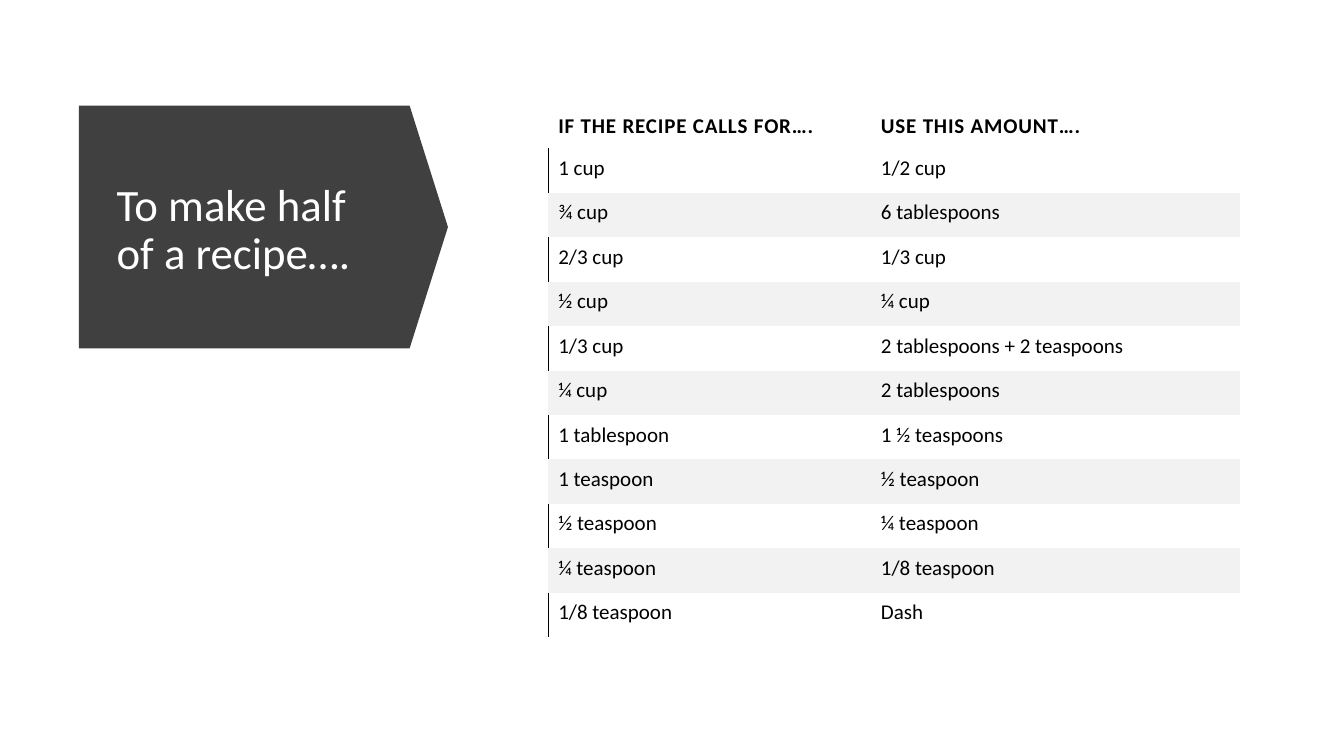
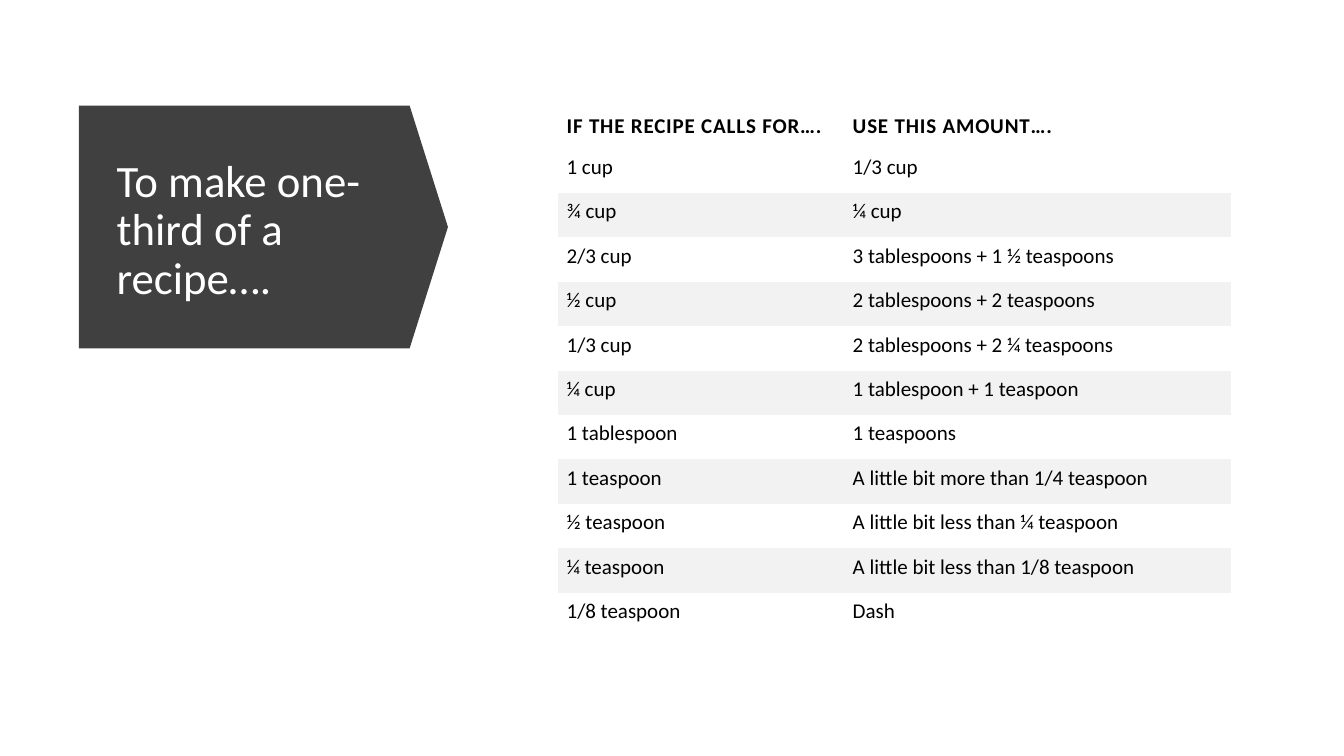
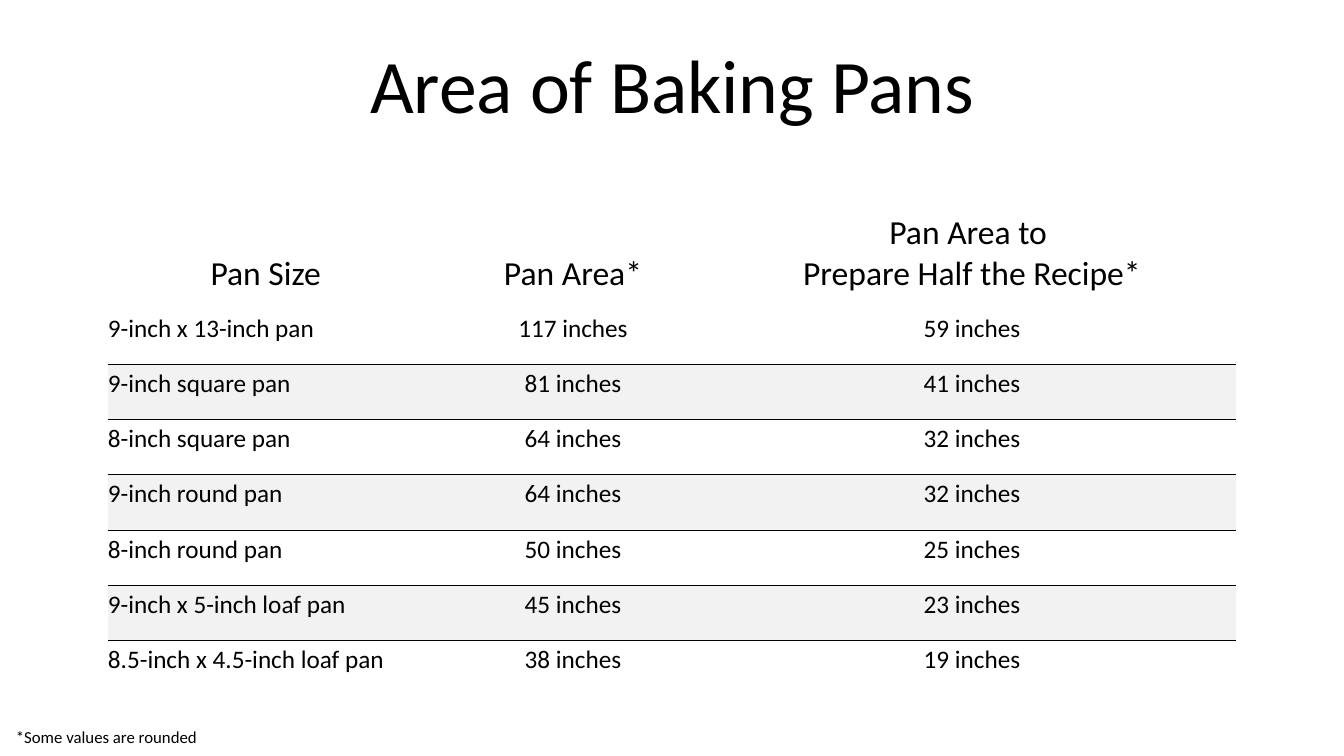
from dataclasses import dataclass

from lxml import etree
from pptx import Presentation
from pptx.dml.color import RGBColor
from pptx.enum import shapes, text
from pptx.oxml import ns
from pptx.util import Cm, Pt


@dataclass(frozen=True)
class Theme:
    font: str = "Calibri"
    ink: str = "000000"
    paper: str = "FFFFFF"
    arrow: str = "404040"
    band: str = "F2F2F2"
    page_title: int = 54
    arrow_title: int = 32
    pan_head: int = 24
    pan_body: int = 18
    recipe: int = 15
    note: int = 12
    plain_table: str = "{2D5ABB26-0587-4C30-8999-92F81FD0307C}"


THEME = Theme()
LEFT, CENTER = text.PP_ALIGN.LEFT, text.PP_ALIGN.CENTER
TOP, MIDDLE, BOTTOM = (text.MSO_ANCHOR.TOP, text.MSO_ANCHOR.MIDDLE,
                       text.MSO_ANCHOR.BOTTOM)

RECIPE_HEAD = ("IF THE RECIPE CALLS FOR….", "USE THIS AMOUNT….")
AMOUNTS = ("1 cup", "¾ cup", "2/3 cup", "½ cup", "1/3 cup", "¼ cup",
           "1 tablespoon", "1 teaspoon", "½ teaspoon", "¼ teaspoon",
           "1/8 teaspoon")
HALVES = ("1/2 cup", "6 tablespoons", "1/3 cup", "¼ cup",
          "2 tablespoons + 2 teaspoons", "2 tablespoons", "1 ½ teaspoons",
          "½ teaspoon", "¼ teaspoon", "1/8 teaspoon", "Dash")
THIRDS = ("1/3 cup", "¼ cup", "3 tablespoons + 1 ½ teaspoons",
          "2 tablespoons + 2 teaspoons", "2 tablespoons + 2 ¼ teaspoons",
          "1 tablespoon + 1 teaspoon", "1 teaspoons",
          "A little bit more than 1/4 teaspoon",
          "A little bit less than ¼ teaspoon",
          "A little bit less than 1/8 teaspoon", "Dash")
PAN_HEAD = ("Pan Size", "Pan Area*", "Pan Area to \nPrepare Half the Recipe*")
PANS = (
    ("9-inch x 13-inch pan", 117, 59),
    ("9-inch square pan", 81, 41),
    ("8-inch square pan", 64, 32),
    ("9-inch round pan", 64, 32),
    ("8-inch round pan", 50, 25),
    ("9-inch x 5-inch loaf pan", 45, 23),
    ("8.5-inch x 4.5-inch loaf pan", 38, 19),
)

# Lengths in cm; insets run left, top, right, bottom.
RECIPE_STYLE = dict(
    top=2.64, row_height=1.12, head_size=THEME.recipe, body_size=THEME.recipe,
    head_font=dict(bold=True), spacing=60, aligns=(LEFT, LEFT), head_align=LEFT)
RECIPES = (
    dict(title="To make half of a recipe….", results=HALVES,
         table=dict(left=13.82, widths=(8.13, 9.3), head_height=1.04,
                    head_insets=(0.25, 0.23, 0.25, 0.23),
                    insets=(0.25, 0.18, 0.25, 0.23), rule=("lnL", 1))),
    dict(title="To make one-third of a recipe….", results=THIRDS,
         table=dict(left=14.07, widths=(7.21, 9.73), head_height=1.07,
                    head_insets=(0.21, 0.23, 0.21, 0.23),
                    insets=(0.21, 0.15, 0.21, 0.23))),
)
PAN_STYLE = dict(
    left=2.72, top=5.18, widths=(8.33, 7.16, 12.95),
    head_height=2.62, row_height=1.39,
    head_size=THEME.pan_head, body_size=THEME.pan_body,
    aligns=(LEFT, CENTER, CENTER), head_align=CENTER,
    head_insets=(0, 0.08, 0.38, 0.38), insets=(0, 0.1, 0.38, 0.38),
    rule=("lnT", 0.75))


def style_text(tf, size, color=THEME.ink, align=LEFT, line_spacing=None,
               spacing=None, **font):
    values = dict(name=THEME.font, size=Pt(size), **font)
    for p in tf.paragraphs:
        p.alignment = align
        p.line_spacing = line_spacing
        for r in p.runs:
            for key, value in values.items():
                setattr(r.font, key, value)
            r.font.color.rgb = RGBColor.from_string(color)
            if spacing:
                r.font._element.set("spc", str(spacing))


def add_text(s, words, box, size, anchor=TOP, **style):
    tf = s.shapes.add_textbox(*map(Cm, box)).text_frame
    tf.word_wrap = True
    tf.vertical_anchor = anchor
    tf.text = words
    style_text(tf, size, **style)


def add_arrow_title(s, words):
    """Draw the right-pointing banner and the title on it."""
    sp = s.shapes.add_shape(shapes.MSO_SHAPE.DOWN_ARROW,
                            Cm(3.58), Cm(1.07), Cm(6.12), Cm(9.3))
    sp.rotation = 270
    sp.adjustments[0], sp.adjustments[1] = 1, 0.158
    sp.shadow.inherit = False
    sp.fill.solid()
    sp.fill.fore_color.rgb = RGBColor.from_string(THEME.arrow)
    sp.line.fill.background()
    add_text(s, words, (2.69, 3.35, 7.42, 4.95), THEME.arrow_title, MIDDLE,
             color=THEME.paper, line_spacing=0.9)


def add_rule(cell, side, points):
    line = etree.Element(ns.qn(f"a:{side}"), w=str(Pt(points)))
    fill = etree.SubElement(line, ns.qn("a:solidFill"))
    etree.SubElement(fill, ns.qn("a:srgbClr"), val=THEME.ink)
    cell._tc.get_or_add_tcPr().insert(0, line)


def style_cell(cell, words, insets, anchor):
    cell.text = words
    cell.vertical_anchor = anchor
    for side, inset in zip(("left", "top", "right", "bottom"), insets):
        setattr(cell, f"margin_{side}", Cm(inset))


def add_banded_table(s, head, body, left, top, widths, head_height, row_height,
                     head_size, body_size, aligns, head_align, head_insets,
                     insets, head_font=None, spacing=None, rule=None):
    """Shade every second body row; rule plain rows at left or shaded ones on top."""
    heights = [head_height] + [row_height] * len(body)
    frame = s.shapes.add_table(len(heights), len(widths), Cm(left), Cm(top),
                               Cm(sum(widths)), Cm(sum(heights)))
    table = frame.table
    table._tbl.tblPr.find(ns.qn("a:tableStyleId")).text = THEME.plain_table
    for column, width in zip(table.columns, widths):
        column.width = Cm(width)
    for row, height in zip(table.rows, heights):
        row.height = Cm(height)

    for col, words in enumerate(head):
        cell = table.cell(0, col)
        style_cell(cell, words, head_insets, BOTTOM)
        style_text(cell.text_frame, head_size, align=head_align,
                   spacing=spacing, **(head_font or {}))
        cell.fill.background()

    for row, values in enumerate(body, 1):
        shaded = row % 2 == 0
        for col, words in enumerate(values):
            cell = table.cell(row, col)
            style_cell(cell, words, insets, TOP)
            style_text(cell.text_frame, body_size, align=aligns[col])
            if shaded:
                cell.fill.solid()
                cell.fill.fore_color.rgb = RGBColor.from_string(THEME.band)
            else:
                cell.fill.background()
            if rule:
                ruled = shaded if rule[0] == "lnT" else not shaded and col == 0
                if ruled:
                    add_rule(cell, *rule)


def main():
    prs = Presentation()
    prs.slide_width, prs.slide_height = Cm(33.87), Cm(19.05)
    blank = prs.slide_layouts[6]

    for recipe in RECIPES:
        s = prs.slides.add_slide(blank)
        add_arrow_title(s, recipe["title"])
        add_banded_table(s, RECIPE_HEAD, list(zip(AMOUNTS, recipe["results"])),
                         **RECIPE_STYLE, **recipe["table"])

    s = prs.slides.add_slide(blank)
    add_text(s, "Area of Baking Pans", (2.34, 0.81, 29.21, 2.59),
             THEME.page_title, BOTTOM, align=CENTER, line_spacing=0.9)
    pans = [(pan, f"{area} inches", f"{half} inches") for pan, area, half in PANS]
    add_banded_table(s, PAN_HEAD, pans, **PAN_STYLE)
    add_text(s, "*Some values are rounded", (0.15, 18.19, 7.24, 0.76), THEME.note)

    prs.save("out.pptx")


if __name__ == "__main__":
    main()
